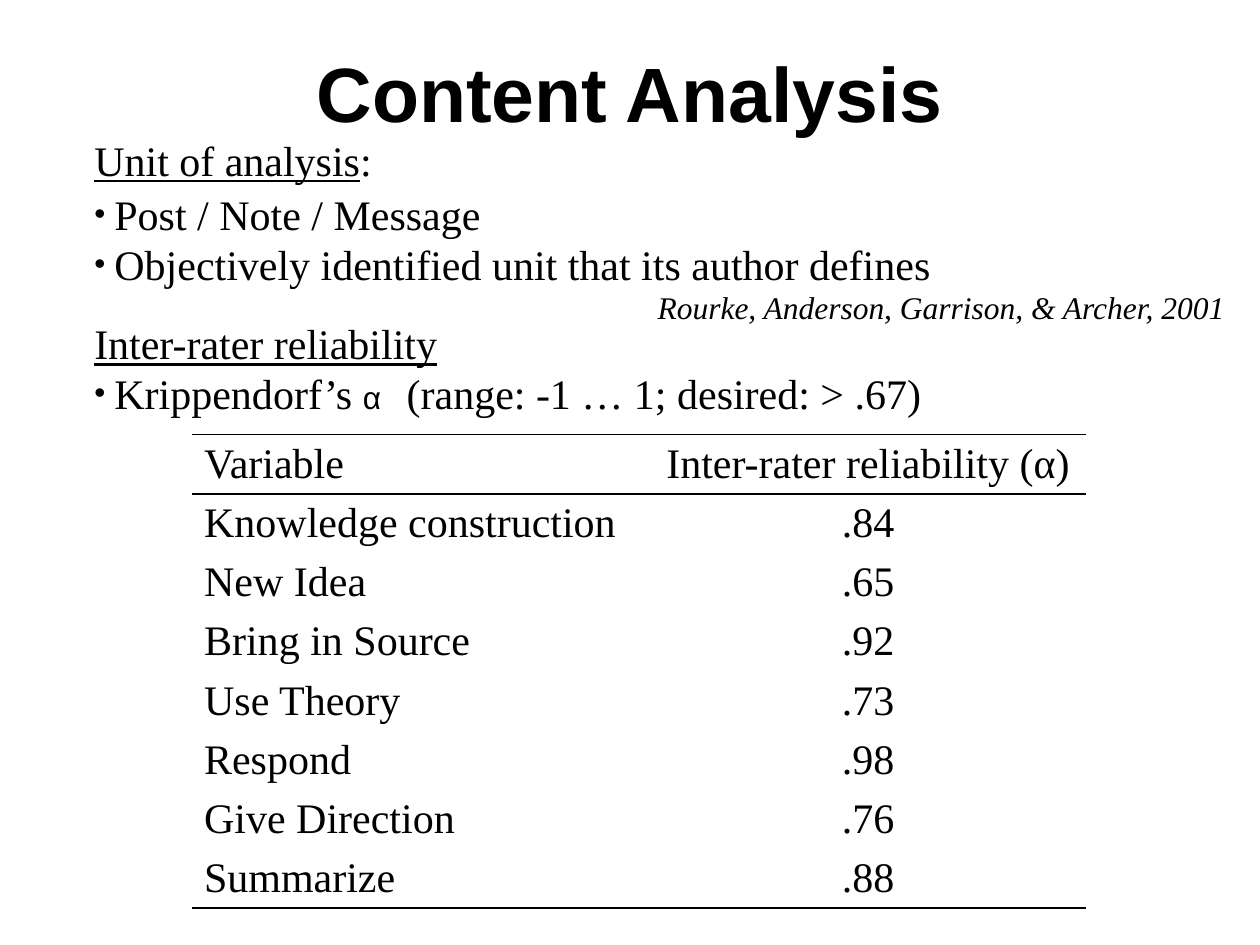
from lxml import etree
from pptx import Presentation
from pptx import util as u
from pptx.dml.color import RGBColor
from pptx.enum import text
from pptx.oxml import ns

COLORS = {"ink": "000000"}
ALIGN = text.PP_ALIGN
RELIABILITY = [
    ("Variable", "Inter-rater reliability (α)"),
    ("Knowledge construction", ".84"),
    ("New Idea", ".65"),
    ("Bring in Source", ".92"),
    ("Use Theory", ".73"),
    ("Respond", ".98"),
    ("Give Direction", ".76"),
    ("Summarize", ".88"),
]
UNDERLINED = {"underline": True}
SMALL_SANS = {"size": 18, "name": "Arial"}
NOTES = [
    (32, "heading", [("Unit of analysis", UNDERLINED), (":", {})]),
    (31, "bullet", [("Post / Note / Message", {})]),
    (28.5, "bullet", [("Objectively identified unit that its author defines", {})]),
    (21.5, "citation", [("Rourke, Anderson, Garrison, & Archer, 2001", {"size": 18, "italic": True})]),
    (24, "heading", [("Inter-rater reliability", UNDERLINED)]),
    (28.5, "bullet", [("Krippendorf’s ", {}), ("α\t", SMALL_SANS),
                      ("(range: -1 … 1; desired: > .67)", {})]),
]


class SlideBuilder:
    """Holds the text style and the current slide, and adds elements to it."""

    def __init__(self, deck, font="Times New Roman", size=24):
        self.page = deck.slides.add_slide(deck.slide_layouts[5])
        self.font, self.size = font, size

    def format(self, span, name=None, size=None, bold=False, italic=False, underline=False):
        font = span.font
        font.name = name or self.font
        font.size = u.Pt(size or self.size)
        font.bold, font.italic, font.underline = bold, italic, underline
        font.color.rgb = RGBColor.from_string(COLORS["ink"])

    def title(self, words, left, top, width, height):
        box = self.page.shapes.title
        box.left, box.top, box.width, box.height = map(u.Inches, (left, top, width, height))
        frame = box.text_frame
        frame.text = words
        frame.vertical_anchor = text.MSO_ANCHOR.MIDDLE
        para = frame.paragraphs[0]
        para.alignment = ALIGN.CENTER
        self.format(para.runs[0], "Arial", 44, bold=True)

    def bullet(self, para, indent=0.16, tab=2.48):
        props = para._p.get_or_add_pPr()
        props.set("marL", str(u.Inches(indent)))
        props.set("indent", str(-u.Inches(indent)))
        for tag, key, value in (("a:buSzPct", "val", "75000"),
                                ("a:buFont", "typeface", "Arial"),
                                ("a:buChar", "char", "•")):
            etree.SubElement(props, ns.qn(tag)).set(key, value)
        stops = etree.SubElement(props, ns.qn("a:tabLst"))
        etree.SubElement(stops, ns.qn("a:tab"), pos=str(u.Inches(tab)), algn="l")

    def notes(self, lines, left, top, width, height):
        box = self.page.shapes.add_textbox(*map(u.Inches, (left, top, width, height)))
        frame = box.text_frame
        frame.word_wrap = True
        for index, (spacing, kind, spans) in enumerate(lines):
            para = frame.add_paragraph() if index else frame.paragraphs[0]
            if kind == "bullet":
                self.bullet(para)
            para.alignment = ALIGN.RIGHT if kind == "citation" else ALIGN.LEFT
            para.line_spacing = u.Pt(spacing)
            for words, style in spans:
                span = para.add_run()
                span.text = words
                self.format(span, **style)

    def borders(self, cell, ruled):
        props = cell._tc.get_or_add_tcPr()
        for side in ("L", "R", "T", "B"):
            line = etree.SubElement(props, ns.qn(f"a:ln{side}"), w=str(u.Pt(1)))
            if side in ruled:
                fill = etree.SubElement(line, ns.qn("a:solidFill"))
                etree.SubElement(fill, ns.qn("a:srgbClr"), val=COLORS["ink"])
            else:
                etree.SubElement(line, ns.qn("a:noFill"))

    def table(self, rows, left, top, widths, row_height):
        frame = self.page.shapes.add_table(
            len(rows), len(widths), u.Inches(left), u.Inches(top),
            u.Inches(sum(widths)), u.Inches(row_height * len(rows)))
        grid = frame.table
        grid.first_row = grid.horz_banding = False
        for column, width in zip(grid.columns, widths):
            column.width = u.Inches(width)
        rules = {0: "TB", 1: "T", len(rows) - 1: "B"}
        for r, row in enumerate(rows):
            grid.rows[r].height = u.Inches(row_height)
            for c, words in enumerate(row):
                cell = grid.cell(r, c)
                cell.text = words
                self.borders(cell, rules.get(r, ""))
                cell.fill.background()
                para = cell.text_frame.paragraphs[0]
                para.alignment = ALIGN.CENTER if c else ALIGN.LEFT
                self.format(para.runs[0])


def main():
    deck = Presentation()
    deck.slide_width, deck.slide_height = u.Inches(10), u.Inches(7.5)
    slide = SlideBuilder(deck)
    slide.title("Content Analysis", 0.5, 0.3, 9, 0.85)
    slide.table(RELIABILITY, 1.52, 3.45, (3.64, 3.46), 0.47)
    slide.notes(NOTES, 0.65, 0.97, 9.17, 2.4)
    deck.save("out.pptx")


if __name__ == "__main__":
    main()
